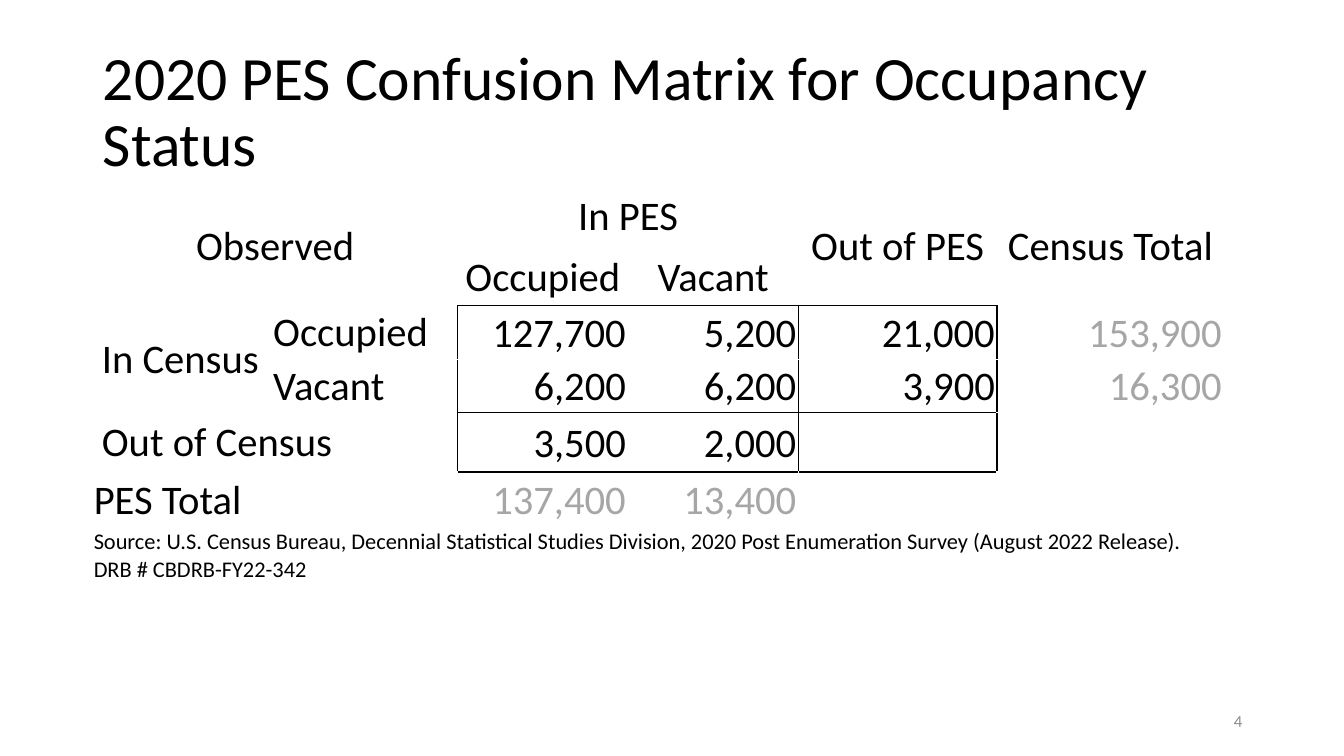
from lxml.etree import SubElement
from pptx import Presentation
from pptx.dml.color import RGBColor
from pptx.enum.text import MSO_ANCHOR as Anchor, PP_ALIGN as Align
from pptx.oxml.ns import qn
from pptx.util import Inches, Pt

COLORS = {"text": "000000", "total": "A6A6A6", "number": "8C8C8C", "blank": "FFFFFF"}
FONT = "Calibri"

COLUMN_WIDTHS = [1.78, 0.28, 1.56, 1.69, 1.69, 1.97, 2.25]
ROW_HEIGHTS = [0.6, 0.58, 0.53, 0.53, 0.59, 0.55, 0.55]

WIDE = (0.09, 0.05, 0.09, 0.05)
NARROW = (0.02, 0.02, 0.02, 0)
TIGHT = (0.01, 0.01, 0.01, 0)

# Labels: row, column, rows spanned, columns spanned, text, alignment, margins, size
LABELS = [
    (0, 0, 2, 3, "Observed", Align.CENTER, WIDE, 29),
    (0, 3, 1, 2, "In PES", Align.CENTER, WIDE, 29),
    (0, 5, 2, 1, "Out of PES", Align.CENTER, WIDE, 29),
    (0, 6, 2, 1, "Census Total", Align.CENTER, WIDE, 29),
    (1, 3, 1, 1, "Occupied", Align.CENTER, NARROW, 29),
    (1, 4, 1, 1, "Vacant", Align.CENTER, NARROW, 29),
    (2, 0, 2, 1, "In Census", Align.LEFT, WIDE, 29),
    (2, 1, 1, 2, "Occupied", Align.LEFT, TIGHT, 29),
    (3, 1, 1, 2, "Vacant", Align.LEFT, TIGHT, 29),
    (4, 0, 1, 3, "Out of Census", Align.LEFT, WIDE, 29),
    (5, 0, 1, 2, "PES Total", Align.LEFT, TIGHT, 29),
    (6, 0, 1, 7, "Source: U.S. Census Bureau, Decennial Statistical Studies Division, "
     "2020 Post Enumeration Survey (August 2022 Release).  DRB # CBDRB-FY22-342",
     Align.LEFT, TIGHT, 16),
]

# Counts start at the third row and fourth column
FIRST_ROW, FIRST_COLUMN = 2, 3
COUNTS = [
    ["127,700", "5,200", "21,000", "153,900"],
    ["6,200", "6,200", "3,900", "16,300"],
    ["3,500", "2,000"],
    ["137,400", "13,400"],
]
TOTAL_ROW, TOTAL_COLUMN = 5, 6

# Grid lines drawn in black around the blocks of the matrix
RULED_ROWS, RULED_COLUMNS = range(2, 5), range(3, 6)
BLACK_HORIZONTALS, BLACK_VERTICALS = (2, 4, 5), (3, 5, 6)


def write_text(frame, text, size, color="text", align=Align.LEFT, line_spacing=None):
    frame.word_wrap = True
    paragraph = frame.paragraphs[0]
    paragraph.alignment = align
    paragraph.line_spacing = line_spacing
    run = paragraph.add_run()
    run.text = text
    run.font.name = FONT
    run.font.size = Pt(size)
    run.font.color.rgb = RGBColor.from_string(COLORS[color])


class MatrixSlide:
    def __init__(self, presentation):
        self.slide = presentation.slides.add_slide(presentation.slide_layouts[5])

    def title(self, text, left, top, width, height):
        shape = self.slide.shapes.title
        shape.left, shape.top = Inches(left), Inches(top)
        shape.width, shape.height = Inches(width), Inches(height)
        shape.text_frame.vertical_anchor = Anchor.MIDDLE
        write_text(shape.text_frame, text, 44, line_spacing=0.9)

    def slide_number(self, text, left, top, width, height):
        shape = self.slide.shapes.add_textbox(
            Inches(left), Inches(top), Inches(width), Inches(height))
        shape.text_frame.vertical_anchor = Anchor.MIDDLE
        write_text(shape.text_frame, text, 12, color="number", align=Align.RIGHT)

    def table(self, left, top):
        frame = self.slide.shapes.add_table(
            len(ROW_HEIGHTS), len(COLUMN_WIDTHS), Inches(left), Inches(top),
            Inches(sum(COLUMN_WIDTHS)), Inches(sum(ROW_HEIGHTS)))
        table = frame.table
        table.first_row = table.horz_banding = False
        for column, width in zip(table.columns, COLUMN_WIDTHS):
            column.width = Inches(width)
        for row, height in zip(table.rows, ROW_HEIGHTS):
            row.height = Inches(height)
        return table

    def cell(self, table, row, column, text, margins=NARROW, **text_format):
        cell = table.cell(row, column)
        cell.vertical_anchor = Anchor.MIDDLE
        (cell.margin_left, cell.margin_top,
         cell.margin_right, cell.margin_bottom) = map(Inches, margins)
        write_text(cell.text_frame, text, **text_format)

    def borders(self, table, row, column):
        """Rule the cell's four edges, black on the matrix blocks and white elsewhere."""
        cell = table.cell(row, column)
        row_end = row + (cell.span_height if cell.is_merge_origin else 1)
        column_end = column + (cell.span_width if cell.is_merge_origin else 1)
        in_rows, in_columns = row in RULED_ROWS, column in RULED_COLUMNS
        edges = {
            "a:lnL": in_rows and column in BLACK_VERTICALS,
            "a:lnR": in_rows and column_end in BLACK_VERTICALS,
            "a:lnT": in_columns and row in BLACK_HORIZONTALS,
            "a:lnB": in_columns and row_end in BLACK_HORIZONTALS,
        }
        properties = cell._tc.get_or_add_tcPr()
        for tag, is_black in edges.items():
            line = SubElement(properties, qn(tag), w=str(Pt(1)))
            fill = SubElement(line, qn("a:solidFill"))
            SubElement(fill, qn("a:srgbClr"), val=COLORS["text" if is_black else "blank"])
        cell.fill.background()


def main():
    presentation = Presentation()
    presentation.slide_width, presentation.slide_height = Inches(13.33), Inches(7.5)
    page = MatrixSlide(presentation)
    page.title("2020 PES Confusion Matrix for Occupancy Status", 0.92, 0.4, 11.5, 1.45)
    page.slide_number("4", 9.42, 6.95, 3, 0.4)

    table = page.table(0.92, 1.85)
    for row, column, height, width, text, align, margins, size in LABELS:
        if height * width > 1:
            table.cell(row, column).merge(table.cell(row + height - 1, column + width - 1))
        page.cell(table, row, column, text, margins, align=align, size=size)
    for row, counts in enumerate(COUNTS, FIRST_ROW):
        for column, count in enumerate(counts, FIRST_COLUMN):
            is_total = row == TOTAL_ROW or column == TOTAL_COLUMN
            page.cell(table, row, column, count, size=29, align=Align.RIGHT,
                      color="total" if is_total else "text")
    for row in range(len(ROW_HEIGHTS)):
        for column in range(len(COLUMN_WIDTHS)):
            page.borders(table, row, column)

    presentation.save("out.pptx")


if __name__ == "__main__":
    main()
